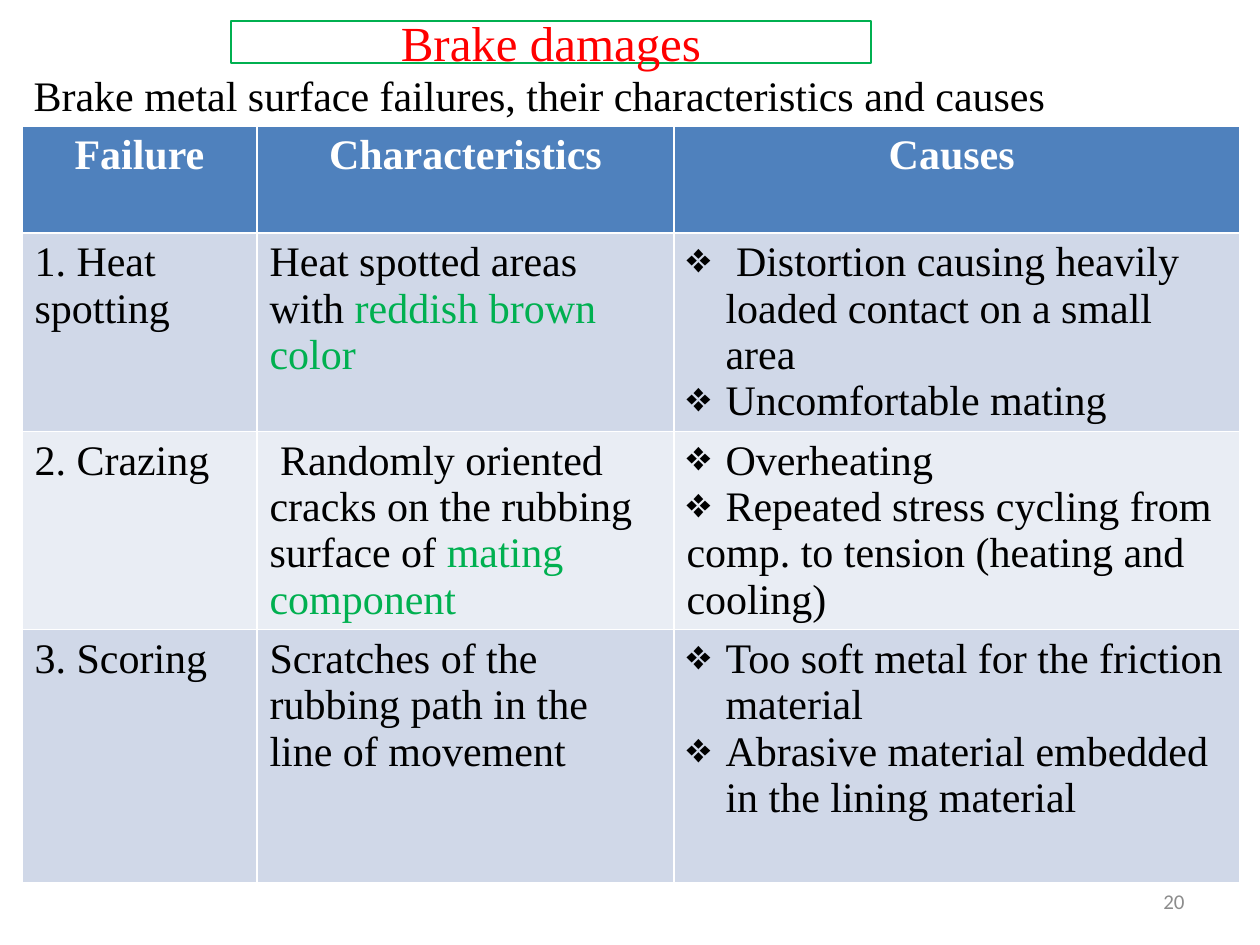
from dataclasses import dataclass

from lxml.etree import SubElement
from pptx import Presentation
from pptx.dml.color import RGBColor
from pptx.enum.text import MSO_ANCHOR as Anchor, MSO_AUTO_SIZE as AutoSize, PP_ALIGN as Align
from pptx.oxml.ns import qn
from pptx.util import Emu, Pt

SCALE = 914400 / 126
SERIF = "Times New Roman"
BLACK, WHITE, RED, GREEN, GRAY = "000000", "FFFFFF", "FF0000", "00B050", "8C8C8C"
HEADER, BANDS = "4F81BD", ("D0D8E8", "E9EDF4")
HANG = 39


@dataclass(frozen=True)
class Cause:
    text: str
    bullet: bool = True


@dataclass(frozen=True)
class Failure:
    name: str
    trait: str
    highlight: str
    causes: tuple[Cause, ...]


HEADINGS = ("Failure", "Characteristics", "Causes ")
FAILURES = (
    Failure("1. Heat spotting", "Heat spotted areas with ", "reddish brown color", (
        Cause(" Distortion causing heavily loaded contact on a small area"),
        Cause("Uncomfortable mating"))),
    Failure("2. Crazing", " Randomly oriented cracks on the rubbing surface of ", "mating component", (
        Cause("Overheating"),
        Cause("Repeated stress cycling from"),
        Cause("comp. to tension (heating and cooling)", False))),
    Failure("3. Scoring", "Scratches of the rubbing path in the line of movement", "", (
        Cause("Too soft metal for the friction material"),
        Cause("Abrasive material embedded in the lining material"))),
)
COLUMNS = (235, 417, 566)
ROWS = (107, 198, 198, 253)


def px(n: int) -> Emu:
    return Emu(round(n * SCALE))


def rgb(value: str) -> RGBColor:
    return RGBColor.from_string(value)


def set_attrs(obj, values: dict) -> None:
    for name, value in values.items():
        setattr(obj, name, value)


def place(sp, left: int, top: int, width: int, height: int) -> None:
    set_attrs(sp, {"left": px(left), "top": px(top), "width": px(width), "height": px(height)})


def add_run(p, text: str, color: str = BLACK, size: int = 24, font: str = SERIF, bold: bool = False) -> None:
    r = p.add_run()
    r.text = text
    set_attrs(r.font, {"name": font, "size": Pt(size), "bold": bold})
    r.font.color.rgb = rgb(color)


def set_bullet(p, char: str = "", hang: int = 0) -> None:
    pPr = p._p.get_or_add_pPr()
    pPr.set("marL", str(px(hang)))
    pPr.set("indent", str(-px(hang)))
    if char:
        SubElement(pPr, qn("a:buChar")).set("char", char)
    else:
        SubElement(pPr, qn("a:buNone"))


def fill_cell(cell, color: str):
    cell.fill.solid()
    cell.fill.fore_color.rgb = rgb(color)
    return cell.text_frame


def add_failure(cells, failure: Failure, band: str) -> None:
    name, trait, causes = (fill_cell(cell, band) for cell in cells)
    add_run(name.paragraphs[0], failure.name)
    add_run(trait.paragraphs[0], failure.trait)
    if failure.highlight:
        add_run(trait.paragraphs[0], failure.highlight, GREEN)
    for i, cause in enumerate(failure.causes):
        p = causes.add_paragraph() if i else causes.paragraphs[0]
        if cause.bullet:
            set_bullet(p, "❖", HANG)
        add_run(p, cause.text)


def add_failure_table(s) -> None:
    table = s.shapes.add_table(len(ROWS), len(COLUMNS), px(22), px(126), px(sum(COLUMNS)), px(sum(ROWS))).table
    for column, width in zip(table.columns, COLUMNS):
        column.width = px(width)
    for row, height in zip(table.rows, ROWS):
        row.height = px(height)
    for cell, heading in zip(table.rows[0].cells, HEADINGS):
        p = fill_cell(cell, HEADER).paragraphs[0]
        p.alignment = Align.CENTER
        add_run(p, heading, WHITE, bold=True)
    for i, failure in enumerate(FAILURES):
        add_failure(table.rows[i + 1].cells, failure, BANDS[i % 2])


def main() -> None:
    prs = Presentation()
    set_attrs(prs, {"slide_width": px(1260), "slide_height": px(945)})
    s = prs.slides.add_slide(prs.slide_layouts[1])

    title, body = s.placeholders
    place(title, 231, 21, 640, 42)
    title.line.color.rgb = rgb(GREEN)
    title.line.width = Pt(0.75)
    set_attrs(title.text_frame, {"auto_size": AutoSize.NONE, "vertical_anchor": Anchor.MIDDLE})
    p = title.text_frame.paragraphs[0]
    set_attrs(p, {"alignment": Align.CENTER, "space_before": Pt(4)})
    add_run(p, "Brake damages", RED, 28)

    place(body, 21, 63, 1207, 697)
    body.text_frame.auto_size = AutoSize.NONE
    p = body.text_frame.paragraphs[0]
    set_bullet(p)
    add_run(p, "Brake metal surface failures, their characteristics and causes")

    add_failure_table(s)

    number = s.shapes.add_textbox(px(903), px(876), px(294), px(50))
    set_attrs(number.text_frame, {"word_wrap": True, "vertical_anchor": Anchor.MIDDLE})
    p = number.text_frame.paragraphs[0]
    p.alignment = Align.RIGHT
    add_run(p, "20", GRAY, 12, "Calibri")

    prs.save("out.pptx")


if __name__ == "__main__":
    main()
